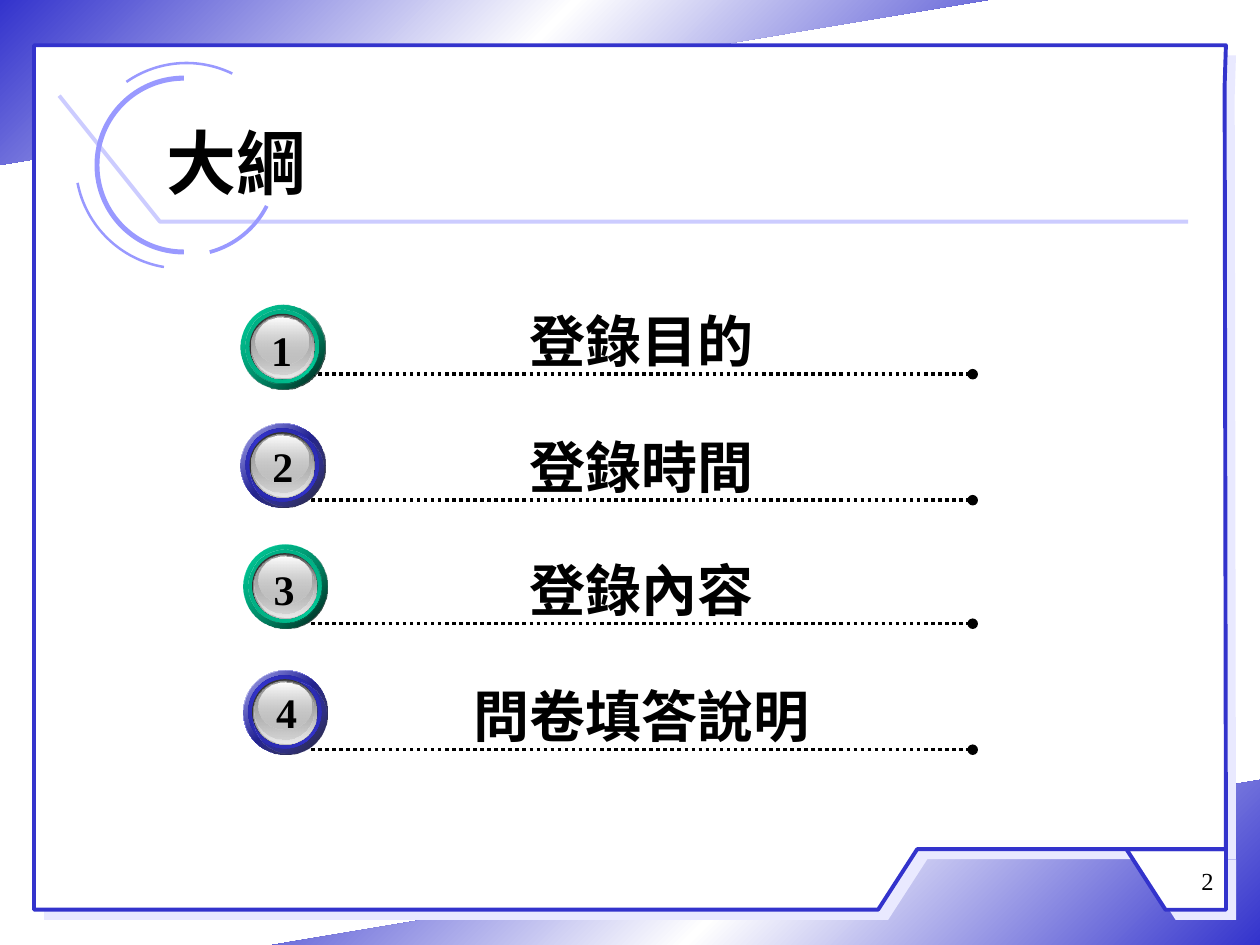
from dataclasses import dataclass
from math import cos, radians, sin, tan

from pptx import Presentation
from pptx.dml.color import RGBColor
from pptx.enum.dml import MSO_LINE
from pptx.enum.shapes import MSO_CONNECTOR, MSO_SHAPE as SHAPE
from pptx.enum.text import MSO_ANCHOR as ANCHOR, MSO_AUTO_SIZE as FIT, PP_ALIGN as ALIGN
from pptx.oxml import parse_xml
from pptx.oxml.ns import nsdecls, qn
from pptx.util import Inches, Pt


@dataclass(frozen=True)
class Theme:
    white: str = "FFFFFF"
    black: str = "000000"
    blue: str = "3333CC"
    blue_edge: str = "27279C"
    blue_glow: str = "2A2AA7"
    green: str = "00CC99"
    green_edge: str = "009C75"
    green_glow: str = "00A77E"
    arc: str = "9999FF"
    rule: str = "CCCCFF"
    shade: str = "E9E9FF"
    rim: str = "333333"
    dark: str = "595959"
    mid: str = "989898"
    silver: str = "C0C0C0"
    light: str = "E9E9E9"
    cjk: str = "Noto Sans CJK SC"
    serif: str = "Times New Roman"
    title_size: int = 40
    label_size: int = 32
    number_size: int = 24
    page_size: int = 14


@dataclass(frozen=True)
class Gradient:
    angle: int
    stops: tuple


T = Theme()


def write_text(tf, text, *, size, font, bold=True, align=ALIGN.LEFT, anchor=ANCHOR.TOP,
               wrap=True, grow=False, hang=0):
    tf.word_wrap = wrap
    tf.auto_size = FIT.SHAPE_TO_FIT_TEXT if grow else FIT.NONE
    tf.vertical_anchor = anchor
    p = tf.paragraphs[0]
    p.alignment = align
    if hang:
        pPr = p._p.get_or_add_pPr()
        pPr.set("marL", str(Inches(hang)))
        pPr.set("indent", str(-Inches(hang)))
    r = p.add_run()
    r.text = text
    r.font.name, r.font.size, r.font.bold = font, Pt(size), bold
    r.font.color.rgb = RGBColor.from_string(T.black)
    r._r.rPr.append(parse_xml(f'<a:ea {nsdecls("a")} typeface="{font}"/>'))


def curve_points(cx, cy, radius, start, end, pieces=2):
    step = radians(end - start) / pieces
    k = 4 / 3 * tan(step / 4)
    points = [(cx + radius * cos(radians(start)), cy + radius * sin(radians(start)))]
    for i in range(pieces):
        a = radians(start) + i * step
        b = a + step
        points += [(cx + radius * (cos(a) - k * sin(a)), cy + radius * (sin(a) + k * cos(a))),
                   (cx + radius * (cos(b) + k * sin(b)), cy + radius * (sin(b) - k * cos(b))),
                   (cx + radius * cos(b), cy + radius * sin(b))]
    return points


class Canvas:
    def __init__(self, slide):
        self.slide = slide
        self.shapes = slide.shapes

    def start_group(self):
        self.shapes = self.slide.shapes.add_group_shape().shapes

    def style(self, sp, fill=None, line=None, width=2.25):
        sp.shadow.inherit = False
        if isinstance(fill, Gradient):
            stops = "".join(
                f'<a:gs pos="{pos * 1000}"><a:srgbClr val="{color}">'
                f'<a:alpha val="{alpha * 1000}"/></a:srgbClr></a:gs>'
                for pos, color, alpha in fill.stops)
            sp._element.spPr.insert(2, parse_xml(
                f'<a:gradFill {nsdecls("a")} rotWithShape="1"><a:gsLst>{stops}</a:gsLst>'
                f'<a:lin ang="{fill.angle * 60000}" scaled="1"/></a:gradFill>'))
        elif fill:
            sp.fill.solid()
            sp.fill.fore_color.rgb = RGBColor.from_string(fill)
        else:
            sp.fill.background()
        if line:
            sp.line.color.rgb = RGBColor.from_string(line)
            sp.line.width = Pt(width)
        else:
            sp.line.fill.background()

    def shape(self, kind, x, y, w, h, fill, flip=None):
        sp = self.shapes.add_shape(kind, Inches(x), Inches(y), Inches(w), Inches(h))
        self.style(sp, fill)
        if flip:
            sp._element.spPr.find(qn("a:xfrm")).set(flip, "1")

    def outline(self, points, fill=None, line=None, shift=0, close=True):
        pts = [(Inches(x + shift), Inches(y + shift)) for x, y in points]
        fb = self.shapes.build_freeform(*pts[0])
        fb.add_line_segments(pts[1:], close=close)
        sp = fb.convert_to_shape()
        self.style(sp, fill, line)
        return sp

    def arc(self, frame, turn, cx, cy, outer, inner, start, end):
        x, y, w, h = frame
        sp = self.outline([(x, y), (x + w, y), (x + w, y + h), (x, y + h)], T.arc)
        sp.rotation = turn
        ca, sa = cos(radians(turn)), sin(radians(turn))

        def pt(point):
            dx, dy = point[0] - x - w / 2, point[1] - y - h / 2
            return (f'<a:pt x="{Inches(w / 2 + dx * ca + dy * sa)}" '
                    f'y="{Inches(h / 2 - dx * sa + dy * ca)}"/>')

        def cubics(points):
            return "".join("<a:cubicBezTo>" + "".join(map(pt, points[i:i + 3]))
                           + "</a:cubicBezTo>" for i in range(1, len(points), 3))

        out = curve_points(cx, cy, outer, start, end)
        back = curve_points(cx, cy, inner, end, start)
        old = sp._element.spPr.find(".//" + qn("a:path"))
        old.getparent().replace(old, parse_xml(
            f'<a:path {nsdecls("a")} w="{Inches(w)}" h="{Inches(h)}">'
            f'<a:moveTo>{pt(out[0])}</a:moveTo>{cubics(out)}'
            f'<a:lnTo>{pt(back[0])}</a:lnTo>{cubics(back)}<a:close/></a:path>'))

    def dotted_line(self, x1, x2, y):
        c = self.shapes.add_connector(MSO_CONNECTOR.STRAIGHT, Inches(x1), Inches(y),
                                      Inches(x2), Inches(y))
        c.line.color.rgb = RGBColor.from_string(T.black)
        c.line.width = Pt(2)
        c.line.dash_style = MSO_LINE.ROUND_DOT
        c.line._get_or_add_ln().append(parse_xml(f'<a:tailEnd {nsdecls("a")} type="oval"/>'))
        c._element.spPr.append(parse_xml(f'<a:effectLst {nsdecls("a")}/>'))

    def text(self, x, y, w, h, text, **fmt):
        box = self.shapes.add_textbox(Inches(x), Inches(y), Inches(w), Inches(h))
        write_text(box.text_frame, text, **fmt)

    def ball(self, x, y, base, color, edge, glow, glow_shift):
        layers = [
            (0, 0, 0.67, 0.67, base),
            (0, 0, 0.67, 0.67, Gradient(45, ((0, color, 32), (100, T.black, 90)))),
            (0.04, 0.04, 0.58, 0.58,
             Gradient(315, ((0, edge, 100), (50, color, 100), (100, edge, 100)))),
            (glow_shift, glow_shift, 0.58, 0.58,
             Gradient(45, ((0, glow, 100), (100, color, 0)))),
            (0.07, 0.07, 0.52, 0.52, T.rim),
            (0.08, 0.08, 0.51, 0.51, Gradient(90, ((0, T.dark, 100), (100, T.silver, 100)))),
            (0.09, 0.09, 0.49, 0.49, Gradient(90, ((0, T.silver, 0), (100, T.light, 100)))),
            (0.09, 0.09, 0.47, 0.46, Gradient(90, ((0, T.mid, 100), (100, T.silver, 48)))),
            (0.12, 0.1, 0.42, 0.37, Gradient(90, ((0, T.white, 100), (100, T.silver, 38)))),
        ]
        for dx, dy, w, h, fill in layers:
            self.shape(SHAPE.OVAL, x + dx, y + dy, w, h, fill)


def draw_frame(c):
    band = Gradient(315, ((0, T.blue, 100), (50, T.white, 100), (100, T.blue, 100)))
    c.shape(SHAPE.RIGHT_TRIANGLE, 2.16, 6.19, 7.84, 1.31, band, "flipH")
    c.shape(SHAPE.RIGHT_TRIANGLE, 0, 0, 7.84, 1.31, band, "flipV")
    corner = [(8.94, 6.74), (9.25, 7.22), (9.73, 7.22), (9.73, 6.74)]
    panel = [(0.27, 0.36), (0.27, 7.22), (6.97, 7.22), (7.28, 6.74), (9.73, 6.74),
             (9.72, 0.68), (9.73, 0.36)]
    for fill, line, shift in ((T.shade, None, 0.08), (T.white, T.blue, 0)):
        for points in (corner, panel):
            c.outline(points, fill, line, shift)


def draw_title(c):
    c.arc((0.58, 0.63, 1.56, 1.47), 223.9, 1.44, 1.29, 0.85, 0.83, 99.5, 169)
    c.arc((0.73, 0.49, 1.47, 1.39), 355.2, 1.48, 1.33, 0.84, 0.82, 235, 296)
    c.outline([(0.47, 0.76), (1.27, 1.76), (9.43, 1.76)], line=T.rule, close=False)
    c.arc((0.76, 0.59, 1.42, 1.43), 270, 1.46, 1.31, 0.71, 0.67, 90, 270)
    c.arc((0.78, 0.59, 1.42, 1.45), 141.1, 1.48, 1.31, 0.73, 0.7, 27, 75)
    c.text(1.22, 0.66, 8.03, 1.25, "大綱", size=T.title_size, font=T.cjk, anchor=ANCHOR.MIDDLE)
    c.text(9.02, 6.82, 0.71, 0.38, "2", size=T.page_size, font=T.serif, bold=False,
           align=ALIGN.RIGHT)


def draw_agenda(c):
    blue_base = Gradient(45, ((0, T.white, 100), (50, T.blue, 100), (100, T.white, 100)))
    green = (T.green, T.green, T.green_edge, T.green_glow, 0.04)
    blue = (blue_base, T.blue, T.blue_edge, T.blue_glow, 0.08)
    rows = [
        ("登錄目的", 1.91, 2.42, 2.97, 2.04, 2.53, green),
        ("登錄時間", 1.91, 3.36, 3.97, 2.05, 3.45, blue),
        ("登錄內容", 1.93, 4.32, 4.95, 2.06, 4.42, green),
        ("問卷填答說明", 1.93, 5.32, 5.95, 2.08, 5.4, blue),
    ]
    for number, (label, x, y, line_y, num_x, num_y, look) in enumerate(rows, 1):
        c.start_group()
        c.dotted_line(2.47, 7.72, line_y)
        c.text(2.72, line_y - 0.59, 4.75, 0.64, label, size=T.label_size, font=T.cjk,
               align=ALIGN.CENTER, grow=True, hang=0.56)
        c.ball(x, y, *look)
        c.text(num_x, num_y, 0.39, 0.5, str(number), size=T.number_size, font=T.serif,
               align=ALIGN.CENTER, wrap=False, grow=True)


def main():
    prs = Presentation()
    prs.slide_width, prs.slide_height = Inches(10), Inches(7.5)
    c = Canvas(prs.slides.add_slide(prs.slide_layouts[6]))
    draw_frame(c)
    draw_title(c)
    draw_agenda(c)
    prs.save("out.pptx")


if __name__ == "__main__":
    main()
